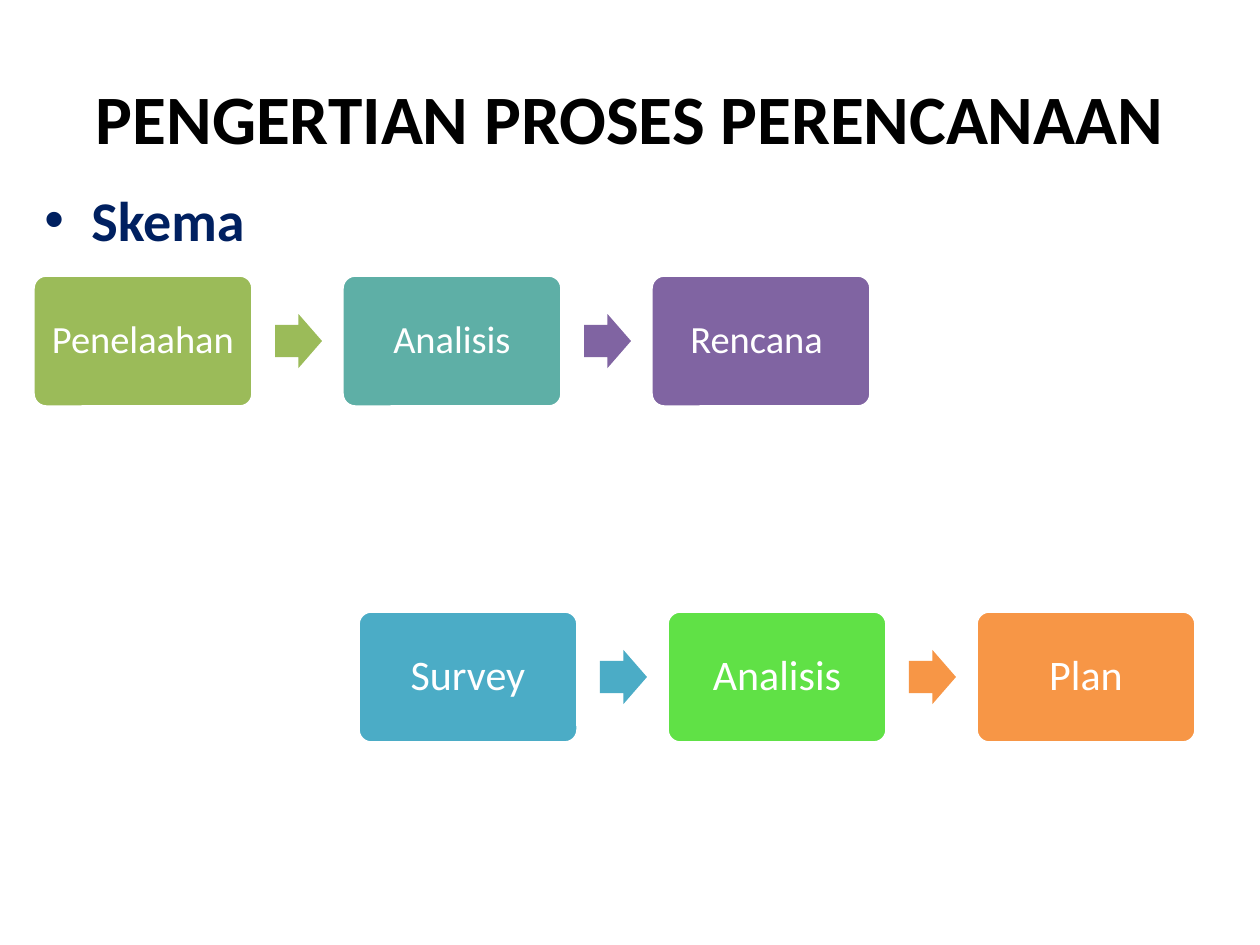
import pptx
import pptx.util
import pptx.dml.color
import pptx.enum.shapes
import pptx.enum.text
import pptx.oxml.ns
import lxml.etree

TITLE = "PENGERTIAN PROSES PERENCANAAN"
POINT = "Skema"
ROWS = [
    dict(left=33, top=275, size=22, inset=11,
         steps=[("Penelaahan", "9BBB59"), ("Analisis", "5EAFA6"), ("Rencana ", "8064A2")],
         arrows=["9BBB59", "8064A2"]),
    dict(left=358, top=611, size=24, inset=13,
         steps=[("Survey", "4BACC6"), ("Analisis", "60E146"), ("Plan", "F79646")],
         arrows=["4BACC6", "F79646"]),
]
BOX_W, BOX_H, PITCH = 220, 132, 309
ARROW_W, ARROW_H, ARROW_X = 47, 54, 242

SHAPE = pptx.enum.shapes.MSO_SHAPE
ALIGN = pptx.enum.text.PP_ALIGN
ANCHOR = pptx.enum.text.MSO_ANCHOR


def px(n):
    return pptx.util.Emu(round(n * 914400 / 126))


def color(code):
    return pptx.dml.color.RGBColor.from_string(code)


def write(para, text, size, code, bold=False):
    run = para.add_run()
    run.text = text
    font = run.font
    font.name, font.size, font.bold = "Calibri", pptx.util.Pt(size), bold
    font.color.rgb = color(code)


def label(slide, place, align, anchor):
    frame = slide.shapes.add_textbox(*map(px, place)).text_frame
    frame.word_wrap = True
    frame.vertical_anchor = anchor
    para = frame.paragraphs[0]
    para.alignment = align
    return para


def block(slide, kind, place, fill, adjust):
    shape = slide.shapes.add_shape(kind, *map(px, place))
    shape.shadow.inherit = False
    shape.fill.solid()
    shape.fill.fore_color.rgb = color(fill)
    shape.line.fill.background()
    for i, value in enumerate(adjust):
        shape.adjustments[i] = value
    return shape


def step(slide, place, text, fill, size, inset):
    shape = block(slide, SHAPE.ROUNDED_RECTANGLE, place, fill, [0.1])
    shape.line.color.rgb = color("FFFFFF")
    shape.line.width = pptx.util.Pt(2)
    frame = shape.text_frame
    frame.word_wrap = True
    frame.vertical_anchor = ANCHOR.MIDDLE
    frame.margin_left = frame.margin_right = px(inset)
    frame.margin_top = frame.margin_bottom = px(inset)
    para = frame.paragraphs[0]
    para.alignment = ALIGN.CENTER
    para.line_spacing = 0.9
    write(para, text, size, "FFFFFF")


def bullet(para, indent):
    props = para._p.get_or_add_pPr()
    props.set("marL", str(px(indent)))
    props.set("indent", str(-px(indent)))
    qn = pptx.oxml.ns.qn
    lxml.etree.SubElement(props, qn("a:buFont")).set("typeface", "Arial")
    lxml.etree.SubElement(props, qn("a:buChar")).set("char", "•")


def main():
    deck = pptx.Presentation()
    deck.slide_width, deck.slide_height = px(1260), px(945)
    slide = deck.slides.add_slide(deck.slide_layouts[6])

    title = label(slide, (63, 38, 1134, 158), ALIGN.CENTER, ANCHOR.MIDDLE)
    write(title, TITLE, 39.6, "000000", True)
    point = label(slide, (32, 179, 1176, 624), ALIGN.JUSTIFY, ANCHOR.TOP)
    bullet(point, 47)
    write(point, POINT, 32, "002060", True)

    for row in ROWS:
        left, top = row["left"], row["top"]
        for i, (text, fill) in enumerate(row["steps"]):
            place = (left + i * PITCH, top, BOX_W, BOX_H)
            step(slide, place, text, fill, row["size"], row["inset"])
        for i, fill in enumerate(row["arrows"]):
            place = (left + i * PITCH + ARROW_X, top + (BOX_H - ARROW_H) / 2, ARROW_W, ARROW_H)
            block(slide, SHAPE.RIGHT_ARROW, place, fill, [0.6, 0.5])

    deck.save("out.pptx")


if __name__ == "__main__":
    main()
